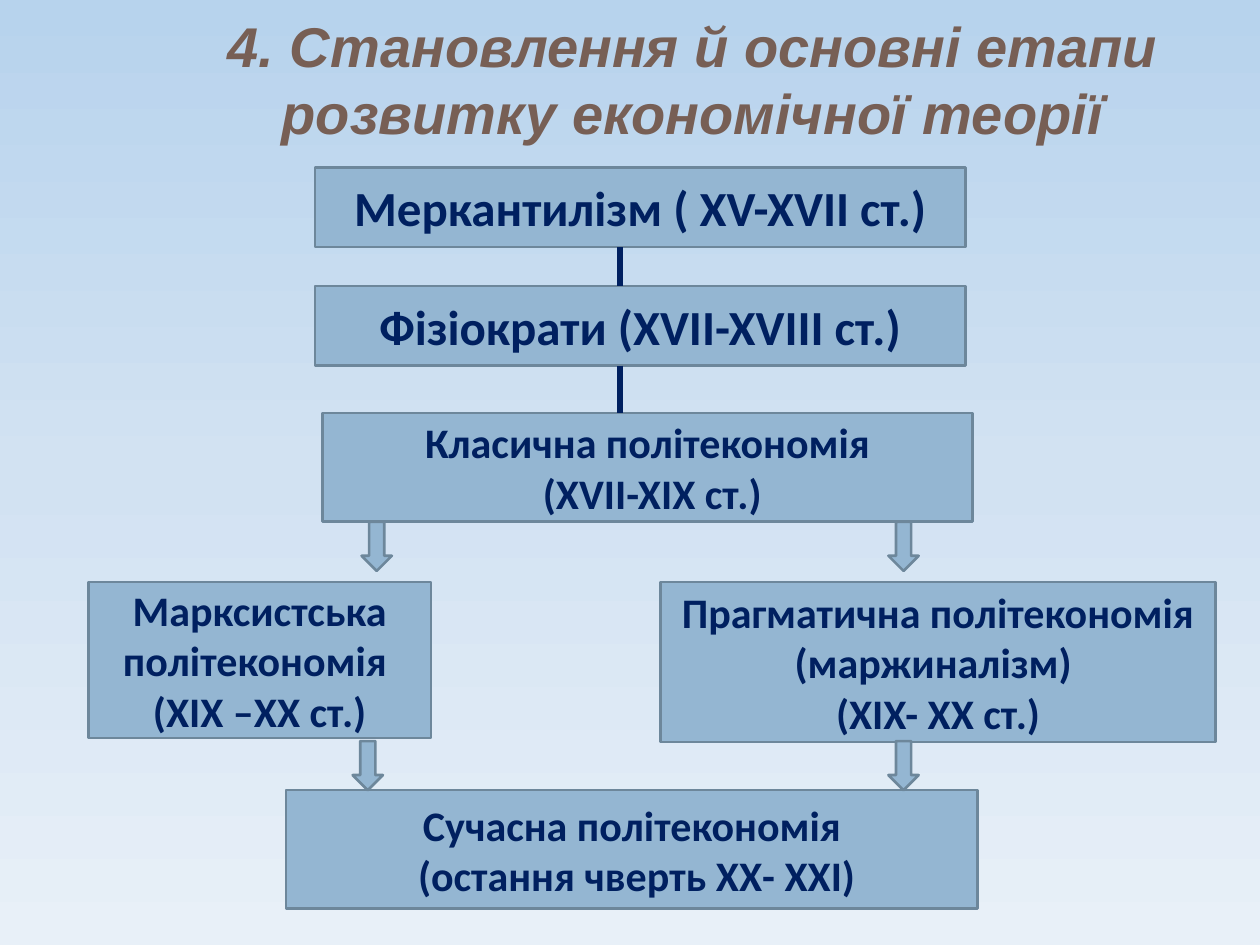
"""Build a slide on the stages in the development of economic theory."""
from copy import deepcopy
from dataclasses import dataclass

from lxml import etree
from pptx import Presentation
from pptx.dml.color import RGBColor
from pptx.enum.shapes import MSO_CONNECTOR, MSO_SHAPE
from pptx.enum.text import MSO_ANCHOR, PP_ALIGN
from pptx.oxml.ns import qn
from pptx.util import Cm, Pt

RECTANGLE = MSO_SHAPE.RECTANGLE
DOWN_ARROW = MSO_SHAPE.DOWN_ARROW
STRAIGHT = MSO_CONNECTOR.STRAIGHT
CENTER = PP_ALIGN.CENTER
MIDDLE = MSO_ANCHOR.MIDDLE

STEEL, EDGE, NAVY, BROWN = "94B6D2", "6D879B", "002060", "775F55"
BACKDROP = ((0, "B7D3ED"), (0.5, "D2E2F2"), (1, "E8F0F8"))
LINK_X = 12.5
ARROW_WIDTH, ARROW_HEIGHT = 0.61, 0.99


@dataclass(frozen=True)
class Stage:
    left: float
    top: float
    width: float
    height: float
    lines: tuple[str, ...]
    size: int = 24

    @property
    def bottom(self) -> float:
        return self.top + self.height


MERCANTILISM = Stage(6.35, 3.38, 13.11, 1.6, ("Меркантилізм ( ХV-XVII ст.)",), 28)
PHYSIOCRATS = Stage(6.35, 5.77, 13.11, 1.6, ("Фізіократи (XVII-XVIII cт.)",), 28)
CLASSICAL = Stage(6.5, 8.33, 13.11, 2.18,
                  ("Класична політекономія", " (XVII-XIX cт.)"))
MARXIST = Stage(1.78, 11.73, 6.91, 3.15,
                ("Марксистська політекономія ", "(XIХ –XX cт.)"))
PRAGMATIC = Stage(13.31, 11.73, 11.2, 3.23,
                  ("Прагматична політекономія (маржиналізм) ", "(XIX- ХХ cт.)"))
MODERN = Stage(5.77, 15.93, 13.94, 2.39,
               ("Сучасна політекономія", " (остання чверть ХХ- ХХІ)"))

STAGES = (MERCANTILISM, CLASSICAL, MODERN, PHYSIOCRATS, MARXIST, PRAGMATIC)
LINKS = ((MERCANTILISM, PHYSIOCRATS), (PHYSIOCRATS, CLASSICAL))
ARROWS = ((7.29, 10.52), (17.91, 10.52), (7.11, 14.94), (17.91, 14.94))


def color(value: str) -> RGBColor:
    return RGBColor.from_string(value)


def write(shape, lines, *, size, font, fill, italic=False) -> None:
    frame = shape.text_frame
    frame.word_wrap = True
    frame.vertical_anchor = MIDDLE
    for index, line in enumerate(lines):
        paragraph = frame.add_paragraph() if index else frame.paragraphs[0]
        paragraph.alignment = CENTER
        run = paragraph.add_run()
        run.text = line
        run.font.size = Pt(size)
        run.font.name = font
        run.font.bold = True
        run.font.italic = italic
        run.font.color.rgb = color(fill)


def add_block(slide, kind, left: float, top: float, width: float, height: float):
    block = slide.shapes.add_shape(kind, Cm(left), Cm(top), Cm(width), Cm(height))
    block.shadow.inherit = False
    block.fill.solid()
    block.fill.fore_color.rgb = color(STEEL)
    block.line.color.rgb = color(EDGE)
    block.line.width = Pt(1.5)
    return block


def add_stage(slide, stage: Stage) -> None:
    block = add_block(slide, RECTANGLE, stage.left, stage.top, stage.width, stage.height)
    write(block, stage.lines, size=stage.size, font="Calibri", fill=NAVY)


def add_link(slide, upper: Stage, lower: Stage) -> None:
    link = slide.shapes.add_connector(
        STRAIGHT, Cm(LINK_X), Cm(upper.bottom), Cm(LINK_X), Cm(lower.top))
    link.line.color.rgb = color(NAVY)
    link.line.width = Pt(3)
    etree.SubElement(link._element.spPr, qn("a:effectLst"))


def paint_background(slide) -> None:
    fill = slide.background.fill
    fill.gradient()
    fill.gradient_angle = 270
    stop_list = next(slide._element.iter(qn("a:gsLst")))
    stop_list.append(deepcopy(stop_list[0]))
    for stop, (position, value) in zip(fill.gradient_stops, BACKDROP):
        stop.position = position
        stop.color.rgb = color(value)


def add_title(slide) -> None:
    title = slide.shapes.title
    title.left, title.top, title.width, title.height = Cm(2.54), 0, Cm(22.86), Cm(3.18)
    write(title, ("4. Становлення й основні етапи розвитку економічної теорії",),
          size=32, font="Arial", fill=BROWN, italic=True)


def main() -> None:
    deck = Presentation()
    deck.slide_width, deck.slide_height = Cm(25.4), Cm(19.05)
    slide = deck.slides.add_slide(deck.slide_layouts.get_by_name("Title Only"))
    paint_background(slide)
    add_title(slide)
    for stage in STAGES:
        add_stage(slide, stage)
    for upper, lower in LINKS:
        add_link(slide, upper, lower)
    for left, top in ARROWS:
        add_block(slide, DOWN_ARROW, left, top, ARROW_WIDTH, ARROW_HEIGHT)
    deck.save("out.pptx")


if __name__ == "__main__":
    main()
